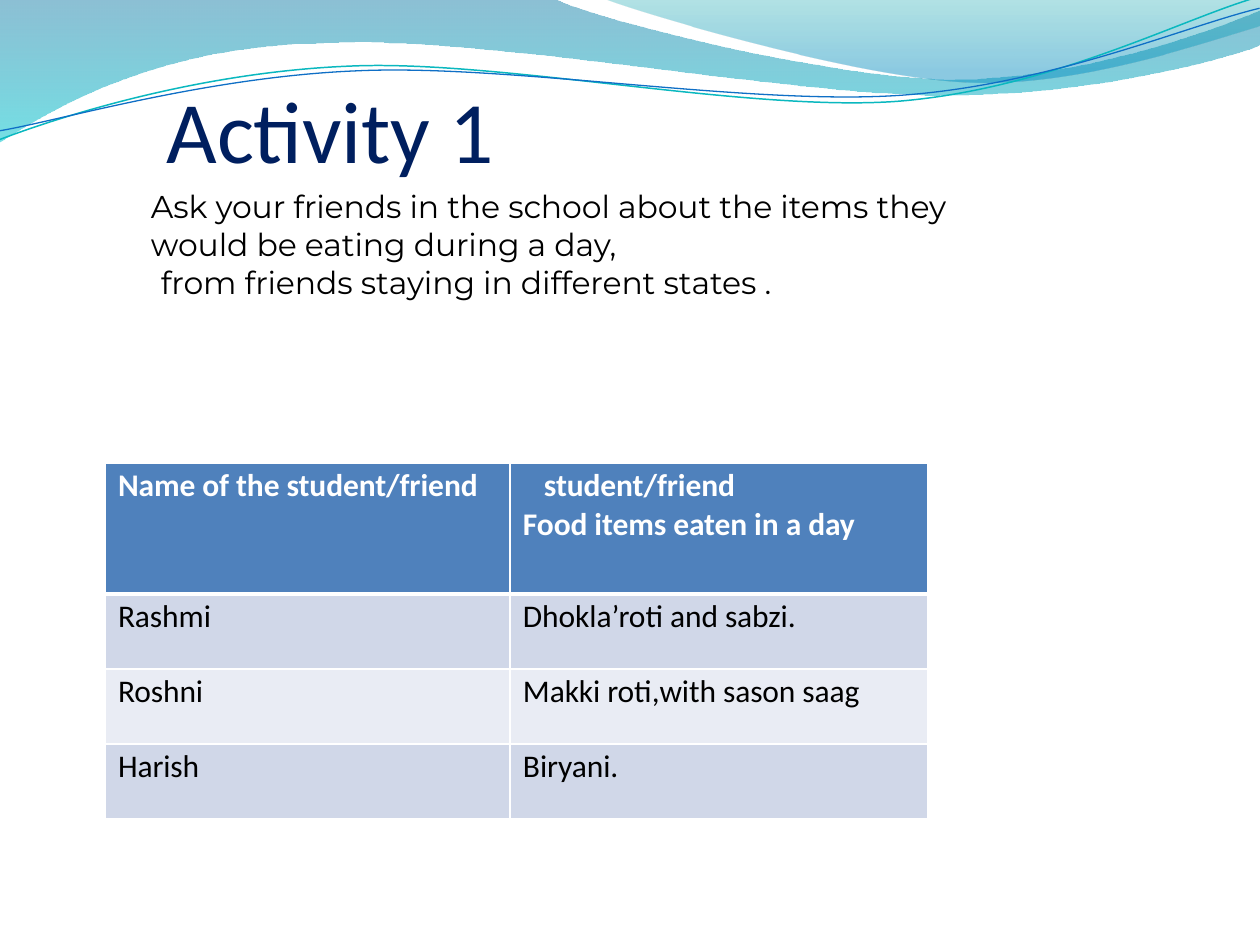
import pptx
import pptx.dml.color
import pptx.enum.text
import pptx.oxml
import pptx.oxml.ns
import pptx.util

EMU_PER_PX = 914400 / 126
WAVE_TILT = -2.7

COLORS = {
    "title": "001F5F",
    "text": "000000",
    "white": "FFFFFF",
    "header": "4F81BC",
    "odd_row": "D0D7E8",
    "even_row": "E9ECF4",
    "band_top": "0074A1",
    "band_bottom": "00C6CF",
    "crest_top": "00A1A9",
    "crest_bottom": "008BBF",
    "teal_line": "0AB8BF",
    "blue_line": "0F6FC6",
}

BAND = [
    [(0, 0)],
    [(554, -1)],
    [(600, 21), (837, 79), (955, 79)],
    [(1075, 79), (1207, 33), (1260, 11)],
    [(1261, 45)],
    [(1239, 55), (1096, 96), (940, 95)],
    [(784, 95), (481, 35), (324, 43)],
    [(163, 45), (58, 105), (-1, 142)],
]
CREST = [
    [(604, -1)],
    [(641, 14), (859, 78), (969, 82)],
    [(1079, 87), (1211, 40), (1260, 26)],
    [(1260, 0)],
]
TEAL_WAVE = [
    [(-3, 110)],
    [(58, 90), (199, 52), (350, 53)],
    [(499, 53), (745, 118), (896, 114)],
    [(1049, 109), (1184, 45), (1260, 27)],
]
BLUE_WAVE = [
    [(-2, 101)],
    [(57, 94), (207, 57), (357, 58)],
    [(509, 58), (750, 112), (902, 108)],
    [(1052, 104), (1188, 52), (1262, 38)],
]

FOOD_ROWS = [
    ("Rashmi", "Dhokla’roti and sabzi."),
    ("Roshni", "Makki roti,with sason saag"),
    ("Harish", "Biryani."),
]


def px(length):
    return pptx.util.Emu(round(length * EMU_PER_PX))


def rgb(name):
    return pptx.dml.color.RGBColor.from_string(COLORS[name])


def add_outline(shapes, segments, close):
    points = [(px(x), px(y)) for segment in segments for x, y in segment]
    builder = shapes.build_freeform(*points[0], scale=1.0)
    builder.add_line_segments(points[1:], close=close)
    outline = builder.convert_to_shape()
    outline.shadow.inherit = False
    steps = iter(list(outline._element.spPr.iter(pptx.oxml.ns.qn("a:lnTo"))))
    for segment in segments[1:]:
        lines = [next(steps) for point in segment]
        if len(segment) == 3:
            curve = pptx.oxml.parse_xml(f'<a:cubicBezTo {pptx.oxml.ns.nsdecls("a")}/>')
            lines[0].addprevious(curve)
            for line in lines:
                curve.append(line[0])
                line.getparent().remove(line)
    return outline


def add_swoosh(shapes, segments, stops):
    swoosh = add_outline(shapes, segments, True)
    swoosh.line.fill.background()
    swoosh.fill.gradient()
    swoosh.fill.gradient_angle = 270
    for stop, (position, color, opacity) in zip(swoosh.fill.gradient_stops, stops):
        stop.position = position
        stop.color.rgb = rgb(color)
    tints = swoosh._element.spPr.iter(pptx.oxml.ns.qn("a:srgbClr"))
    for tint, (position, color, opacity) in zip(tints, stops):
        tint.append(pptx.oxml.parse_xml(
            f'<a:alpha {pptx.oxml.ns.nsdecls("a")} val="{opacity * 1000}"/>'))


def add_wave(shapes, segments, color, width):
    wave = add_outline(shapes, segments, False)
    wave.rotation = WAVE_TILT
    wave.fill.background()
    wave.line.color.rgb = rgb(color)
    wave.line.width = pptx.util.Pt(width)


def write_lines(frame, lines, size, color, font="Calibri", bold=False, before=0, tracking=-5):
    for i, (text, indent) in enumerate(lines):
        line = frame.paragraphs[0] if i == 0 else frame.add_paragraph()
        run = line.add_run()
        run.text = text
        run._r.get_or_add_rPr().set("spc", str(tracking))
        line.space_before = pptx.util.Pt(0 if i else before)
        line.font.name = font
        line.font.size = pptx.util.Pt(size)
        line.font.bold = bold
        line.font.color.rgb = rgb(color)
        if indent:
            line._p.get_or_add_pPr().set("marL", str(px(indent)))


def add_text(slide, left, top, width, height, inset, anchor):
    frame = slide.shapes.add_textbox(px(left), px(top), px(width), px(height)).text_frame
    frame.word_wrap = True
    frame.vertical_anchor = anchor
    frame.margin_left = frame.margin_right = frame.margin_bottom = 0
    frame.margin_top = px(inset)
    return frame


def set_borders(cell, widths):
    properties = cell._tc.get_or_add_tcPr()
    for side, width in zip("LRTB", widths):
        properties.append(pptx.oxml.parse_xml(
            f'<a:ln{side} {pptx.oxml.ns.nsdecls("a")} w="{pptx.util.Pt(width)}">'
            f'<a:solidFill><a:srgbClr val="{COLORS["white"]}"/></a:solidFill></a:ln{side}>'))


def add_food_table(slide):
    header = ([("Name of the student/friend", 0)],
              [("student/friend", 21), ("Food items eaten in a day", 0)])
    rows = [header] + [[[(text, 0)] for text in row] for row in FOOD_ROWS]
    table = slide.shapes.add_table(len(rows), 2, px(105), px(463), px(823), px(356)).table
    table.first_row = False
    table.horz_banding = False
    for column, width in zip(table.columns, (405, 418)):
        column.width = px(width)
    for r, row in enumerate(rows):
        is_header = r == 0
        table.rows[r].height = px(131 if is_header else 75)
        for c, lines in enumerate(row):
            cell = table.cell(r, c)
            cell.margin_left = px(13)
            cell.margin_top = px(4)
            cell.margin_right = cell.margin_bottom = 0
            set_borders(cell, (1, 1, 3 if r == 1 else 1, 3 if is_header else 1))
            cell.fill.solid()
            cell.fill.fore_color.rgb = rgb(
                "header" if is_header else "odd_row" if r % 2 else "even_row")
            write_lines(cell.text_frame, lines, 18, "white" if is_header else "text",
                        bold=is_header, before=2.5)


def main():
    deck = pptx.Presentation()
    deck.slide_width = px(1260)
    deck.slide_height = px(945)
    slide = deck.slides.add_slide(deck.slide_layouts[6])
    anchors = pptx.enum.text.MSO_ANCHOR

    add_swoosh(slide.shapes, BAND, [(0, "band_top", 45), (1, "band_bottom", 55)])
    add_swoosh(slide.shapes, CREST, [(0, "crest_top", 30), (0.8, "crest_bottom", 45)])
    waves = slide.shapes.add_group_shape().shapes
    add_wave(waves, TEAL_WAVE, "teal_line", 0.85)
    add_wave(waves, BLUE_WAVE, "blue_line", 0.75)

    title = add_text(slide, 165, 74, 963, 107, 1, anchors.BOTTOM)
    write_lines(title, [("Activity 1", 2)], 50, "title", tracking=-20)

    add_food_table(slide)

    instructions = add_text(slide, 110, 94, 922, 208, 93, anchors.TOP)
    write_lines(instructions, [
        ("Ask your friends in the school about the items they would be eating during a day,", 41),
        ("from friends staying in different states .", 51),
    ], 18, "text", "Montserrat")

    deck.save("out.pptx")


if __name__ == "__main__":
    main()
